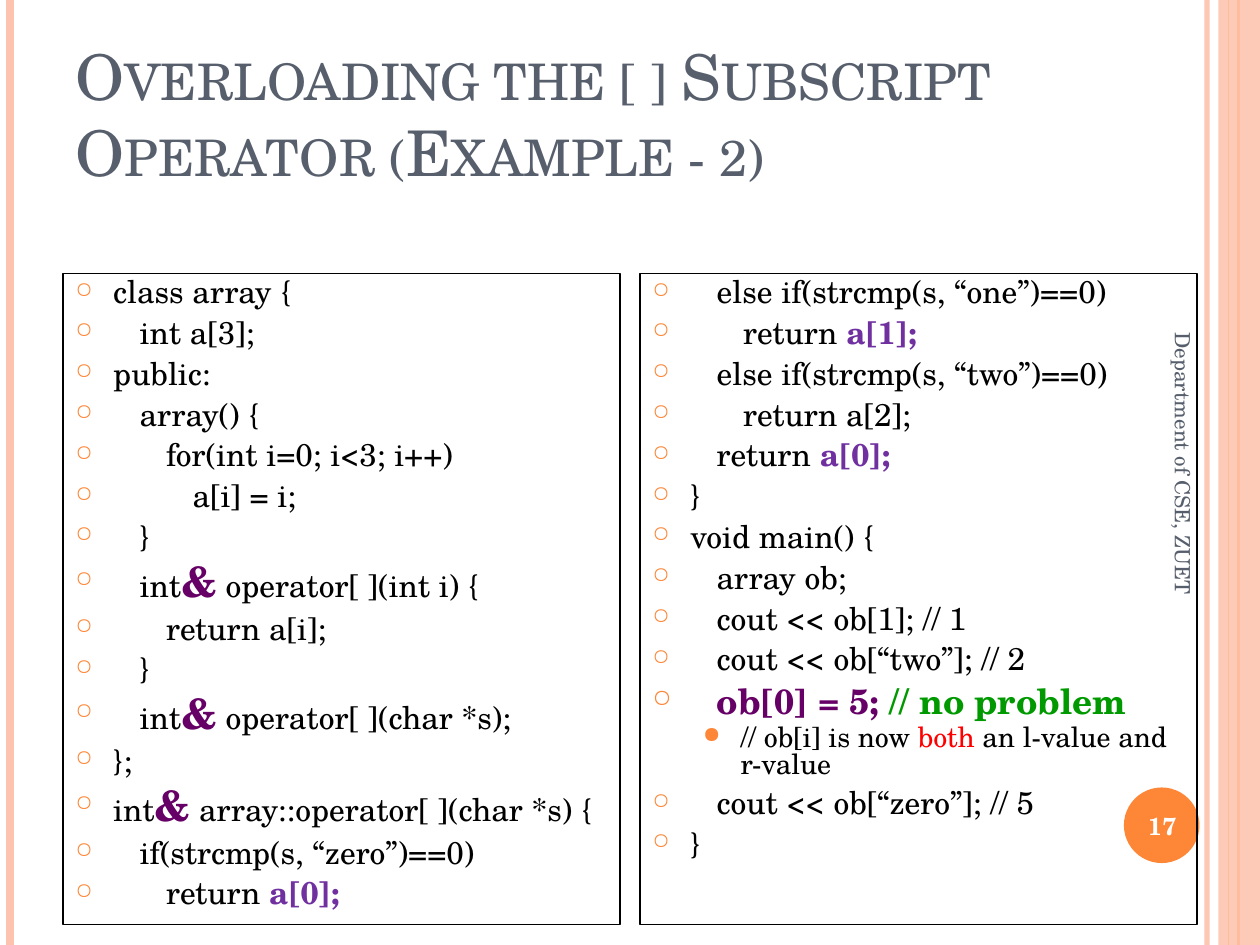
from lxml import etree
from pptx import Presentation
from pptx.dml.color import RGBColor
from pptx.enum.shapes import MSO_CONNECTOR, MSO_SHAPE
from pptx.enum.text import MSO_ANCHOR, PP_ALIGN
from pptx.oxml.ns import qn
from pptx.util import Inches, Pt

STRAIGHT = MSO_CONNECTOR.STRAIGHT
RECTANGLE, OVAL = MSO_SHAPE.RECTANGLE, MSO_SHAPE.OVAL
MIDDLE, BOTTOM = MSO_ANCHOR.MIDDLE, MSO_ANCHOR.BOTTOM
LEFT, CENTER = PP_ALIGN.LEFT, PP_ALIGN.CENTER

ORANGE = RGBColor(0xFE, 0x86, 0x37)
PEACH = RGBColor(0xFE, 0xC3, 0xAE)
SLATE = RGBColor(0x57, 0x5F, 0x6D)
BLACK = RGBColor(0x00, 0x00, 0x00)
WHITE = RGBColor(0xFF, 0xFF, 0xFF)
PLUM = RGBColor(0x66, 0x00, 0x66)
VIOLET = RGBColor(0x70, 0x30, 0xA0)
GREEN = RGBColor(0x00, 0x99, 0x00)
RED = RGBColor(0xFF, 0x00, 0x00)
FONT = "TeX Gyre Schola"

# Run styles: size, colour, bold
CODE = (18, BLACK, False)
AMPERSAND = (24, PLUM, True)
ELEMENT = (18, VIOLET, True)
ASSIGNMENT = (20, PLUM, True)
REMARK = (20, GREEN, True)
NOTE = (16, BLACK, False)
NOTE_RED = (16, RED, False)


def style_run(span, size, color, bold=False):
    span.font.name = FONT
    span.font.size = Pt(size)
    span.font.color.rgb = color
    span.font.bold = bold


def set_alpha(shape, percent):
    color = shape._element.spPr.find(".//" + qn("a:srgbClr"))
    etree.SubElement(color, qn("a:alpha"), val=str(percent * 1000))


deck = Presentation()
deck.slide_width, deck.slide_height = Inches(10), Inches(7.5)
page = deck.slides.add_slide(deck.slide_layouts[5])

# Side stripes: x, colour, width, opacity
for x, color, width, opacity in [
    (9.58, PEACH, 3, 93),
    (0.08, PEACH, 4.5, 100),
    (9.83, ORANGE, 1.5, 100),
    (9.75, ORANGE, 0.75, 100),
]:
    stripe = page.shapes.add_connector(STRAIGHT, Inches(x), 0, Inches(x), Inches(7.5))
    stripe.line.color.rgb = color
    stripe.line.width = Pt(width)
    etree.SubElement(stripe._element.spPr, qn("a:effectLst"))
    if opacity < 100:
        set_alpha(stripe, opacity)

# Right band and page number disc
for kind, left, top, width, height, color in [
    (RECTANGLE, 9.67, 0, 0.33, 7.5, PEACH),
    (OVAL, 8.92, 6.25, 0.6, 0.6, ORANGE),
]:
    shape = page.shapes.add_shape(
        kind, Inches(left), Inches(top), Inches(width), Inches(height))
    shape.shadow.inherit = False
    shape.fill.solid()
    shape.fill.fore_color.rgb = color
    shape.line.fill.background()
    if kind == RECTANGLE:
        set_alpha(shape, 87)

# Title
title = page.shapes.title
title.left, title.top = Inches(0.5), Inches(0.3)
title.width, title.height = Inches(8.17), Inches(1.25)
title.text_frame.text = "Overloading the [ ] Subscript Operator (Example - 2)"
title.text_frame.vertical_anchor = BOTTOM
title.text_frame.word_wrap = True
para = title.text_frame.paragraphs[0]
para.alignment = LEFT
style_run(para.runs[0], 36, SLATE)
para.runs[0].font._element.set("cap", "small")

# Footer and page number
for text, left, top, width, height, rotation, align, style in [
    ("Department of CSE, ZUET", 7.64, 4.09, 3.5, 0.4, 90, LEFT, (12, SLATE)),
    ("17", 8.89, 6.27, 0.67, 0.57, 0, CENTER, (14, WHITE, True)),
]:
    box = page.shapes.add_textbox(
        Inches(left), Inches(top), Inches(width), Inches(height))
    box.rotation = rotation
    box.text_frame.word_wrap = True
    box.text_frame.vertical_anchor = MIDDLE
    box.text_frame.text = text
    para = box.text_frame.paragraphs[0]
    para.alignment = align
    style_run(para.runs[0], *style)

# Code lines: nesting depth, then runs of text and style
class_code = [
    (0, [("class array {", CODE)]),
    (1, [("int a[3];", CODE)]),
    (0, [("public:", CODE)]),
    (1, [("array() {", CODE)]),
    (2, [("for(int i=0; i<3; i++)", CODE)]),
    (3, [("a[i] = i;", CODE)]),
    (1, [("}", CODE)]),
    (1, [("int", CODE), ("&", AMPERSAND), (" operator[ ](int i) {", CODE)]),
    (2, [("return a[i];", CODE)]),
    (1, [("}", CODE)]),
    (1, [("int", CODE), ("&", AMPERSAND), (" operator[ ](char *s);", CODE)]),
    (0, [("};", CODE)]),
    (0, [("int", CODE), ("&", AMPERSAND), (" array::operator[ ](char *s) {", CODE)]),
    (1, [("if(strcmp(s, “zero”)==0)", CODE)]),
    (2, [("return ", CODE), ("a[0];", ELEMENT)]),
]
main_code = [
    (1, [("else if(strcmp(s, “one”)==0)", CODE)]),
    (2, [("return ", CODE), ("a[1];", ELEMENT)]),
    (1, [("else if(strcmp(s, “two”)==0)", CODE)]),
    (2, [("return a[2];", CODE)]),
    (1, [("return ", CODE), ("a[0];", ELEMENT)]),
    (0, [("}", CODE)]),
    (0, [("void main() {", CODE)]),
    (1, [("array ob;", CODE)]),
    (1, [("cout << ob[1]; // 1", CODE)]),
    (1, [("cout << ob[“two”]; // 2", CODE)]),
    (1, [("ob[0] = 5; ", ASSIGNMENT), ("// no problem", REMARK)]),
    (0, [("// ob[i] is now ", NOTE), ("both", NOTE_RED),
         (" an l-value and r-value", NOTE)]),
    (1, [("cout << ob[“zero”]; // 5", CODE)]),
    (0, [("}", CODE)]),
]

# Code panels: the bullets stay in one column while the code is indented
for left, code in [(0.5, class_code), (5.08, main_code)]:
    panel = page.shapes.add_textbox(
        Inches(left), Inches(2.17), Inches(4.42), Inches(5.17))
    panel.line.color.rgb = BLACK
    panel.line.width = Pt(0.75)
    frame = panel.text_frame
    frame.word_wrap = True
    for number, (depth, runs) in enumerate(code):
        para = frame.paragraphs[0] if number == 0 else frame.add_paragraph()
        is_note = runs[0][1] == NOTE
        para.level = 1 if is_note else 0
        para.line_spacing = 0.8
        para.space_before = Pt(3 if is_note else 6)
        margin = 0.7 if is_note else 0.3 + 0.21 * depth
        hanging = 0.3 if is_note else margin
        props = para._p.get_or_add_pPr()
        props.set("marL", str(Inches(margin)))
        props.set("indent", str(-Inches(hanging)))
        bullet_color = etree.SubElement(props, qn("a:buClr"))
        etree.SubElement(bullet_color, qn("a:srgbClr"), val=str(ORANGE))
        etree.SubElement(props, qn("a:buSzPct"), val="80000" if is_note else "70000")
        etree.SubElement(props, qn("a:buChar"), char="●" if is_note else "○")
        for text, style in runs:
            span = para.add_run()
            span.text = text
            style_run(span, *style)

deck.save("out.pptx")
